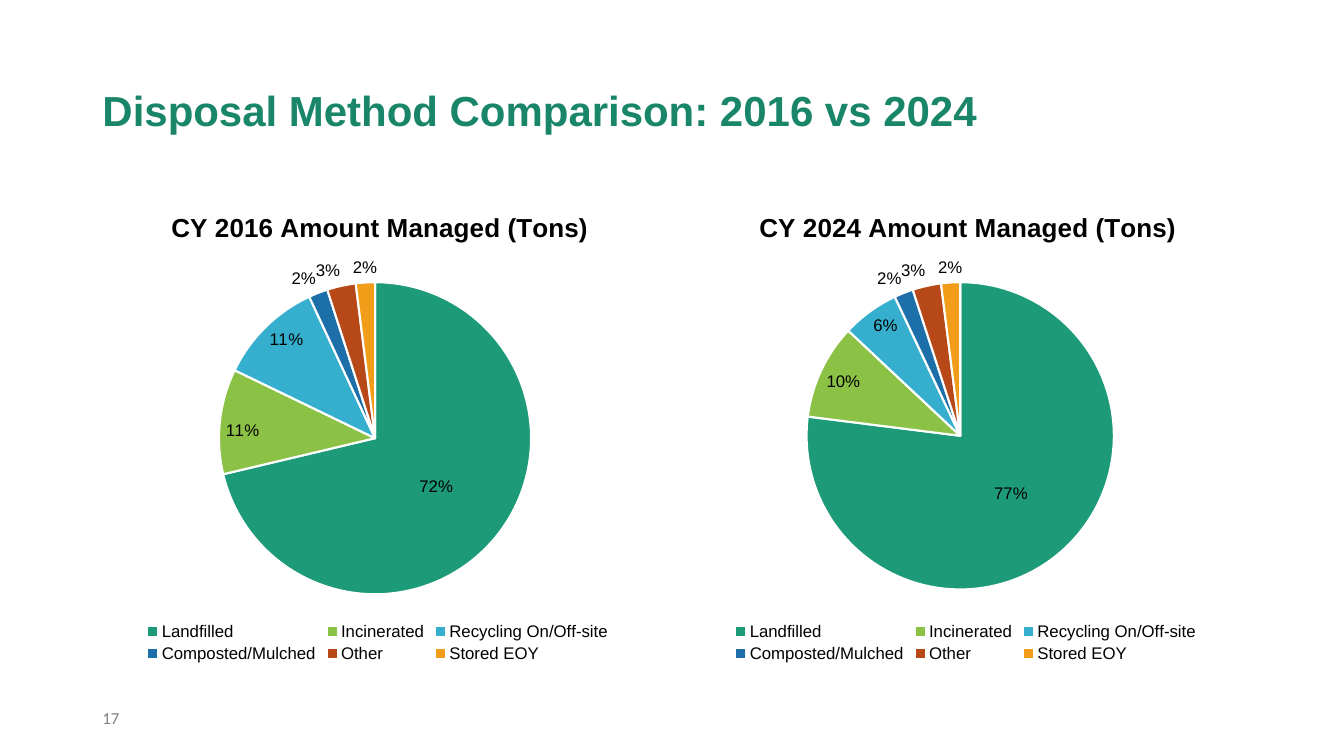
from lxml import etree
from pptx import Presentation
from pptx.chart.data import CategoryChartData
from pptx.dml.color import RGBColor
from pptx.enum.chart import XL_CHART_TYPE as ChartType
from pptx.enum.chart import XL_LABEL_POSITION as LabelPos
from pptx.enum.chart import XL_LEGEND_POSITION as LegendPos
from pptx.enum.text import MSO_ANCHOR, PP_ALIGN
from pptx.oxml.ns import qn
from pptx.util import Pt

TITLE_GREEN = RGBColor(0x19, 0x85, 0x69)
GRAY = RGBColor(0x80, 0x80, 0x80)
BLACK = RGBColor(0, 0, 0)
WHITE = RGBColor(0xFF, 0xFF, 0xFF)
GREEN = RGBColor(0x1D, 0x9A, 0x78)
LIME = RGBColor(0x8B, 0xC1, 0x45)
SKY = RGBColor(0x36, 0xAF, 0xCE)
BLUE = RGBColor(0x1D, 0x6F, 0xA9)
RUST = RGBColor(0xB7, 0x49, 0x19)
ORANGE = RGBColor(0xF1, 0x9D, 0x19)

METHODS = [
    ("Landfilled", GREEN, LabelPos.CENTER),
    ("Incinerated", LIME, LabelPos.INSIDE_END),
    ("Recycling On/Off-site", SKY, LabelPos.INSIDE_END),
    ("Composted/Mulched", BLUE, LabelPos.OUTSIDE_END),
    ("Other", RUST, LabelPos.OUTSIDE_END),
    ("Stored EOY", ORANGE, LabelPos.OUTSIDE_END),
]
# year, left edge, percentages, pie width and height as shares of the chart
PIES = [
    (2016, 66, (72, 11, 11, 2, 3, 2), 0.55, 0.65),
    (2024, 486, (77, 10, 6, 2, 3, 2), 0.54, 0.64),
]


def style_font(font, size, color, name="Arial", bold=False):
    font.name, font.size, font.bold = name, Pt(size), bold
    font.color.rgb = color


def set_layout(parent, **settings):
    """Give a chart title or plot area a manual layout."""
    layout = parent.get_or_add_layout() if hasattr(parent, "get_or_add_layout") else parent.find(qn("c:layout"))
    if layout is None:
        layout = etree.Element(qn("c:layout"))
        parent.insert(0, layout)
    manual = etree.SubElement(layout, qn("c:manualLayout"))
    for tag, value in settings.items():
        etree.SubElement(manual, qn(f"c:{tag}")).set("val", str(value))


prs = Presentation()
prs.slide_width, prs.slide_height = Pt(960), Pt(540)
s = prs.slides.add_slide(prs.slide_layouts[5])

title = s.shapes.title
title.left, title.top, title.width, title.height = Pt(66), Pt(29), Pt(828), Pt(104)
tf = title.text_frame
tf.text = "Disposal Method Comparison: 2016 vs 2024"
tf.vertical_anchor = MSO_ANCHOR.MIDDLE
p = tf.paragraphs[0]
p.alignment = PP_ALIGN.LEFT
p.line_spacing = 0.9
style_font(p.runs[0].font, 30, TITLE_GREEN, bold=True)

for year, left, shares, pie_width, pie_height in PIES:
    data = CategoryChartData(number_format='0"%"')
    data.categories = [name for name, color, pos in METHODS]
    data.add_series("Series 1", shares)
    chart = s.shapes.add_chart(
        ChartType.PIE, Pt(left), Pt(133), Pt(408), Pt(343), data).chart
    style_font(chart.font, 10, BLACK)

    chart.has_title = True
    tf = chart.chart_title.text_frame
    tf.text = f"CY {year} Amount Managed (Tons)"
    style_font(tf.paragraphs[0].runs[0].font, 18.6, BLACK, bold=True)
    title_xml = chart.chart_title._element
    set_layout(title_xml, xMode="edge", yMode="edge", x=0.13, y=0.04)

    chart.has_legend = True
    chart.legend.position = LegendPos.BOTTOM
    chart.legend.include_in_layout = False
    style_font(chart.legend.font, 12, BLACK)

    plot = chart.plots[0]
    plot.vary_by_categories = True
    for i, (name, color, pos) in enumerate(METHODS):
        point = plot.series[0].points[i]
        point.format.fill.solid()
        point.format.fill.fore_color.rgb = color
        point.format.line.color.rgb = WHITE
        point.format.line.width = Pt(1.5)
        style_font(point.data_label.font, 12, BLACK)
        point.data_label.position = pos
    plot_area = plot._element.getparent()
    set_layout(plot_area, layoutTarget="inner", xMode="edge", yMode="edge",
               x=0.22, y=0.2, w=pie_width, h=pie_height)

tf = s.shapes.add_textbox(Pt(66), Pt(497), Pt(828), Pt(32)).text_frame
tf.word_wrap = True
tf.vertical_anchor = MSO_ANCHOR.MIDDLE
tf.text = "17"
style_font(tf.paragraphs[0].runs[0].font, 12, GRAY, name="Calibri")

prs.save("out.pptx")
